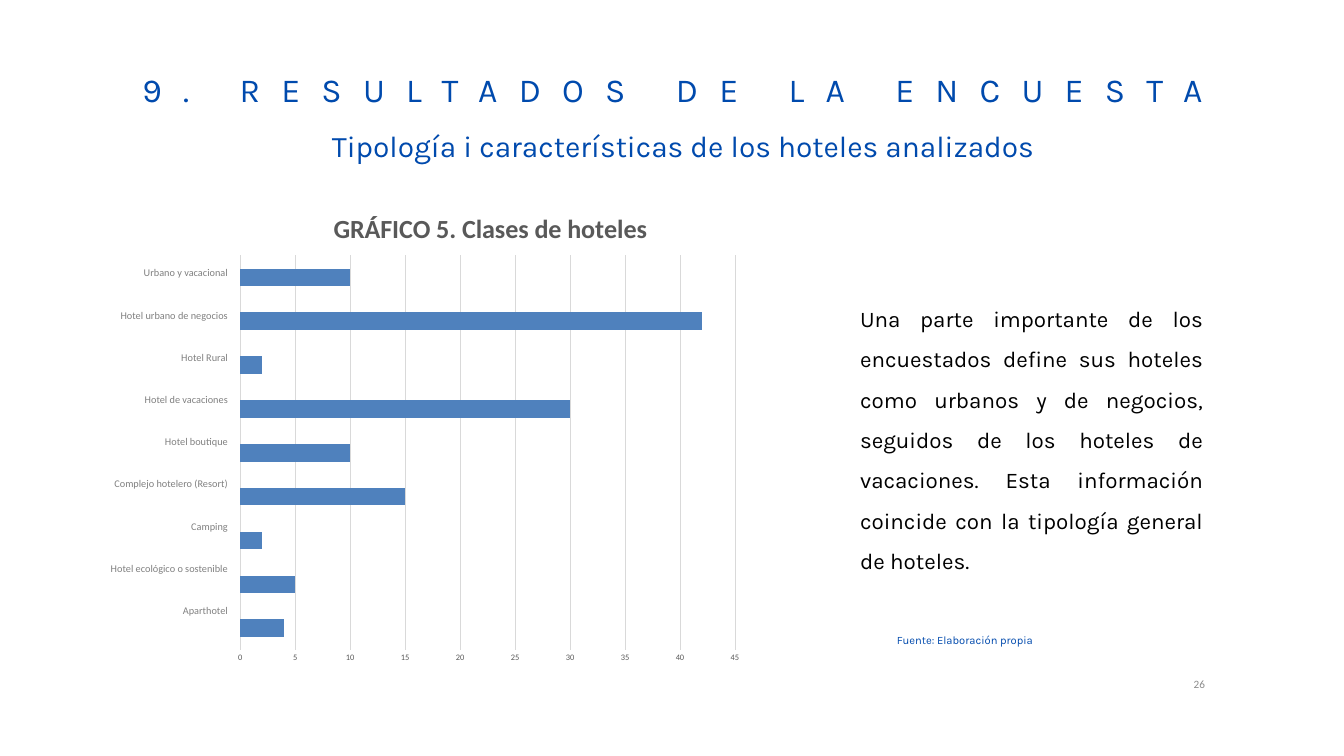
from dataclasses import dataclass

from lxml.etree import SubElement
from pptx import Presentation
from pptx.chart.data import CategoryChartData
from pptx.dml.color import RGBColor
from pptx.enum.chart import XL_CHART_TYPE, XL_TICK_MARK
from pptx.enum.text import MSO_ANCHOR, MSO_AUTO_SIZE, PP_ALIGN
from pptx.oxml.ns import qn
from pptx.util import Inches, Pt


@dataclass(frozen=True)
class Theme:
    head: str = "Karla"
    plain: str = "Calibri"
    blue: str = "004AAD"
    black: str = "000000"
    dark: str = "595959"
    gray: str = "808080"
    pale: str = "8C8C8C"
    grid: str = "D9D9D9"
    bar: str = "4F81BD"
    title: float = 36
    sub: float = 32
    chart: float = 28
    body: float = 24
    note: float = 12
    label: float = 11
    axis: float = 9


@dataclass(frozen=True)
class Box:
    at: tuple[float, float, float, float]
    lines: tuple[str, ...]
    font: str
    size: float
    color: str
    align: PP_ALIGN = PP_ALIGN.LEFT
    anchor: MSO_ANCHOR = MSO_ANCHOR.TOP
    pitch: float = 1.0
    gap: float = 0


THEME = Theme()

# Hotel classes from top to bottom
HOTELS = {
    "Urbano y vacacional": 10,
    "Hotel urbano de negocios": 42,
    "Hotel Rural": 2,
    "Hotel de vacaciones": 30,
    "Hotel boutique": 10,
    "Complejo hotelero (Resort)": 15,
    "Camping": 2,
    "Hotel ecológico o sostenible": 5,
    "Aparthotel": 4,
}

BOXES = (
    Box((12.7, 4.29, 5.3, 4.28),
        ("Una parte importante de los encuestados define sus hoteles como "
         "urbanos y de negocios, seguidos de los hoteles de vacaciones. Esta "
         "información coincide con la tipología general de hoteles.",),
        THEME.head, THEME.body, THEME.black, PP_ALIGN.JUSTIFY, pitch=1.5),
    Box((15.7, 9.98, 2.33, 0.4), ("26",), THEME.plain, THEME.note, THEME.pale,
        PP_ALIGN.RIGHT, MSO_ANCHOR.MIDDLE),
    Box((13.25, 9.38, 3.33, 0.3), ("Fuente: Elaboración propia",),
        THEME.head, THEME.note, THEME.blue),
    Box((0.49, 3.92, 3, 5.94), tuple(HOTELS), THEME.plain, THEME.label,
        THEME.gray, PP_ALIGN.RIGHT, gap=32),
)


def style(font, name: str, size: float, color: str, bold: bool = False) -> None:
    for key, value in {"name": name, "size": Pt(size), "bold": bold}.items():
        setattr(font, key, value)
    font.color.rgb = RGBColor.from_string(color)


def place(shape, at: tuple[float, float, float, float]) -> None:
    for key, value in zip(("left", "top", "width", "height"), at):
        setattr(shape, key, Inches(value))


def draw_box(slide, box: Box) -> None:
    shape = slide.shapes.add_textbox(*map(Inches, box.at))
    frame = shape.text_frame
    frame.word_wrap = True
    frame.vertical_anchor = box.anchor
    for i, line in enumerate(box.lines):
        para = frame.add_paragraph() if i else frame.paragraphs[0]
        para.alignment = box.align
        para.line_spacing = box.pitch
        para.space_before = Pt(box.gap if i else 0)
        run = para.add_run()
        run.text = line
        style(run.font, box.font, box.size, box.color)


def draw_title(slide) -> None:
    """Fill the title with a widely spaced heading that wraps to a subtitle."""
    title = slide.shapes.title
    place(title, (1.42, 0.73, 17.5, 1.63))
    frame = title.text_frame
    settings = {"margin_left": 0, "margin_top": 0, "margin_right": 0,
                "margin_bottom": 0, "word_wrap": True,
                "vertical_anchor": MSO_ANCHOR.TOP,
                "auto_size": MSO_AUTO_SIZE.NONE}
    for key, value in settings.items():
        setattr(frame, key, value)
    para = frame.paragraphs[0]
    para.alignment = PP_ALIGN.CENTER
    para.line_spacing = 1.5
    for text, size, space in (
        ("9. RESULTADOS DE LA ENCUESTA ", THEME.title, 22.8),
        ("Tipología i características de los hoteles analizados", THEME.sub, 0),
    ):
        run = para.add_run()
        run.text = text
        style(run.font, THEME.head, size, THEME.blue)
        run.font._element.set("spc", str(round(space * 100)))


def fix_plot(chart, **parts: float) -> None:
    """Set the inner plot area as shares of the chart's size."""
    plot = chart._chartSpace.chart.plotArea
    layout = plot.find(qn("c:layout"))
    if layout is None:
        layout = SubElement(plot, qn("c:layout"))
        plot.insert(0, layout)
    manual = SubElement(layout, qn("c:manualLayout"))
    values = {"layoutTarget": "inner", "xMode": "edge", "yMode": "edge", **parts}
    for key, value in values.items():
        SubElement(manual, qn(f"c:{key}")).set("val", str(value))


def draw_chart(slide) -> None:
    data = CategoryChartData()
    data.categories = [str(i + 1) for i in range(len(HOTELS))]
    data.add_series("Series 1", list(HOTELS.values())[::-1])
    chart = slide.shapes.add_chart(
        XL_CHART_TYPE.BAR_CLUSTERED,
        *map(Inches, (3.42, 2.88, 7.75, 7.08)), data).chart
    chart.has_legend = False
    style(chart.font, THEME.plain, 10, THEME.black)

    chart.has_title = True
    run = chart.chart_title.text_frame.paragraphs[0].add_run()
    run.text = "GRÁFICO 5. Clases de hoteles"
    style(run.font, THEME.plain, THEME.chart, THEME.dark, True)
    chart.chart_title.include_in_layout = False

    plot = chart.plots[0]
    plot.gap_width = 150
    plot.vary_by_categories = False
    fill = plot.series[0].format.fill
    fill.solid()
    fill.fore_color.rgb = RGBColor.from_string(THEME.bar)

    chart.category_axis.visible = False
    axis = chart.value_axis
    settings = {"minimum_scale": 0, "maximum_scale": 45, "major_unit": 5,
                "major_tick_mark": XL_TICK_MARK.NONE,
                "minor_tick_mark": XL_TICK_MARK.NONE,
                "has_major_gridlines": True}
    for key, value in settings.items():
        setattr(axis, key, value)
    style(axis.tick_labels.font, THEME.plain, THEME.axis, THEME.dark)
    axis.format.line.fill.background()
    line = axis.major_gridlines.format.line
    line.width = Pt(0.75)
    line.color.rgb = RGBColor.from_string(THEME.grid)
    fix_plot(chart, x=0.02, y=0.13, w=0.95, h=0.83)


def main() -> None:
    deck = Presentation()
    deck.slide_width = Inches(20)
    deck.slide_height = Inches(11.25)
    slide = deck.slides.add_slide(deck.slide_layouts[5])
    draw_title(slide)
    draw_chart(slide)
    for box in BOXES:
        draw_box(slide, box)
    deck.save("out.pptx")


if __name__ == "__main__":
    main()
